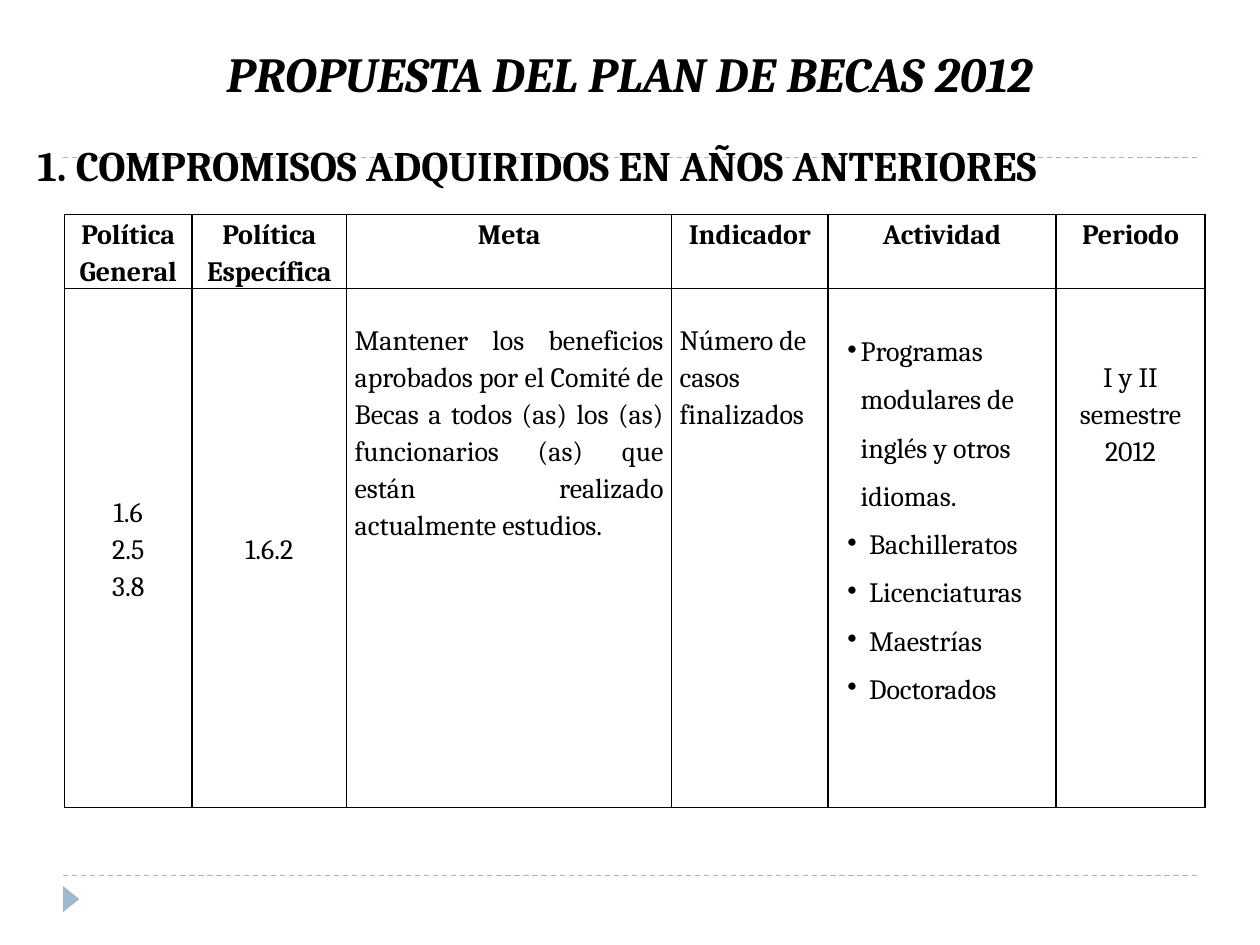
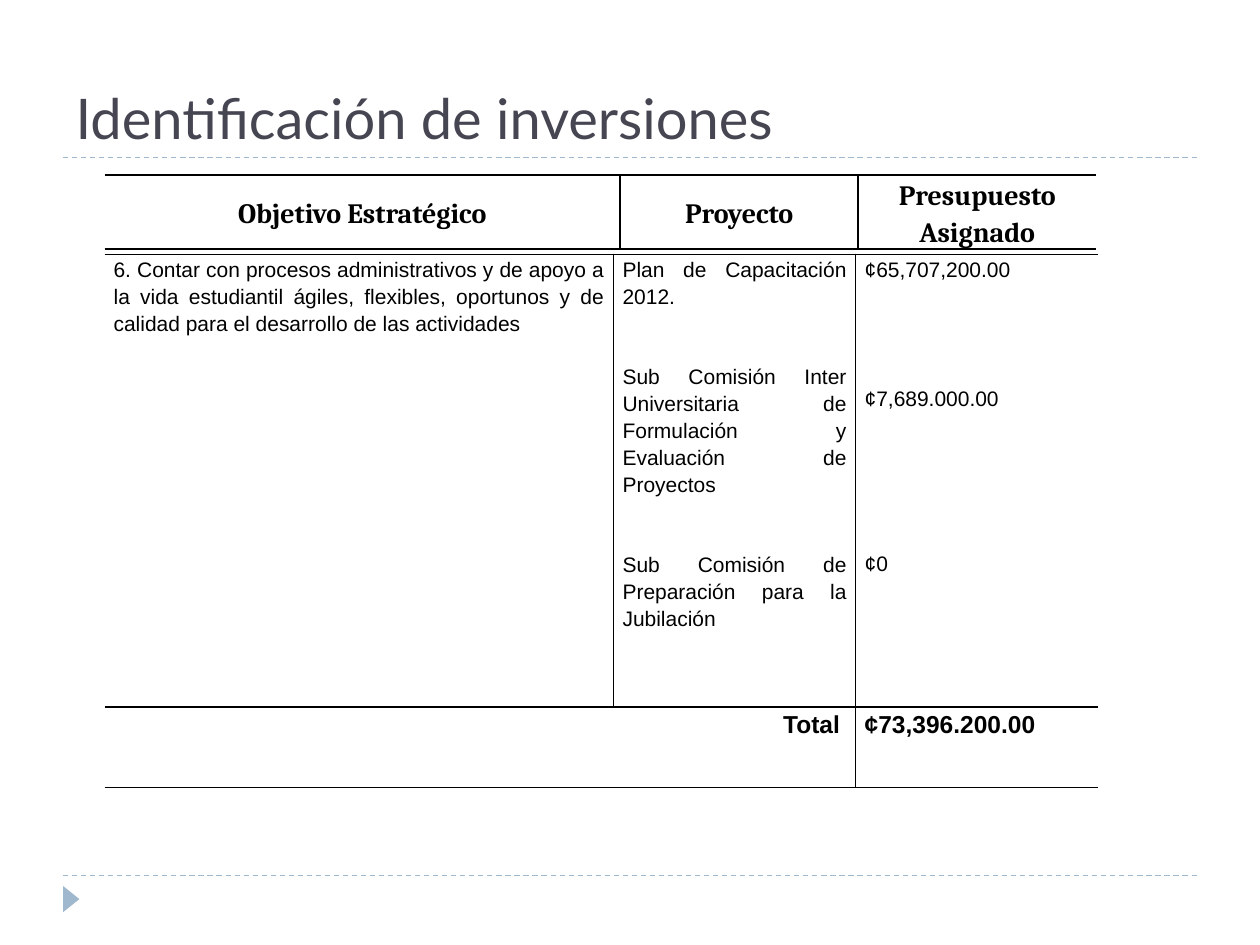
from lxml import etree
from pptx import Presentation
from pptx.dml.color import RGBColor
from pptx.enum import dml, shapes, text
from pptx.oxml import ns
from pptx.util import Cm, Pt

COLORS = {"ink": "000000", "title": "464653", "band": "9FB8CD"}
SERIF, SANS, HEAD = "Cambria", "Arial", "Lato"
ALIGN = text.PP_ALIGN
MIDDLE = text.MSO_ANCHOR.MIDDLE


def color(name):
    return RGBColor.from_string(COLORS[name])


def style(par, font, size, bold=False, italic=False, ink="ink", align=ALIGN.LEFT):
    par.alignment = align
    par.font.name, par.font.size = font, Pt(size)
    par.font.bold, par.font.italic = bold, italic
    par.font.color.rgb = color(ink)


def place(shape, left, top, width, height):
    shape.left, shape.top = Cm(left), Cm(top)
    shape.width, shape.height = Cm(width), Cm(height)


def add_bands(slide):
    """Draw the two dashed rules and the corner marker."""
    for y in (3.18, 17.65):
        rule = slide.shapes.add_connector(
            shapes.MSO_CONNECTOR.STRAIGHT, Cm(1.27), Cm(y), Cm(24.13), Cm(y))
        rule.line.color.rgb = color("band")
        rule.line.width = Pt(0.75)
        rule.line.dash_style = dml.MSO_LINE.DASH
        etree.SubElement(rule.element.spPr, ns.qn("a:effectLst"))
    mark = slide.shapes.add_shape(
        shapes.MSO_SHAPE.ISOSCELES_TRIANGLE, Cm(1.17), Cm(17.96), Cm(0.53), Cm(0.33))
    mark.rotation = 90
    mark.shadow.inherit = False
    mark.fill.solid()
    mark.fill.fore_color.rgb = color("band")
    mark.line.fill.background()


def add_page(prs, title, box, anchor, **look):
    slide = prs.slides.add_slide(prs.slide_layouts[5])
    head = slide.shapes.title
    place(head, *box)
    frame = head.text_frame
    frame.text = title
    frame.vertical_anchor = anchor
    frame.auto_size = text.MSO_AUTO_SIZE.NONE
    style(frame.paragraphs[0], **look)
    add_bands(slide)
    return slide


def add_label(slide, words, box, **look):
    label = slide.shapes.add_textbox(*map(Cm, box))
    label.text_frame.word_wrap = True
    label.text_frame.text = words
    style(label.text_frame.paragraphs[0], **look)


def set_edges(cell, left, right):
    """Rule the top and bottom, and the sides that are asked for."""
    props = cell._tc.get_or_add_tcPr()
    sides = {"L": left, "R": right, "T": True, "B": True}
    for spot, (side, shown) in enumerate(sides.items()):
        edge = etree.Element(ns.qn(f"a:ln{side}"), w=str(Pt(1)))
        fill = etree.SubElement(edge, ns.qn("a:solidFill" if shown else "a:noFill"))
        if shown:
            etree.SubElement(fill, ns.qn("a:srgbClr"), val=COLORS["ink"])
        props.insert(spot, edge)


def add_grid(slide, left, top, cols, rows, inset, closed=False):
    """Add a ruled table; its outer sides are drawn only when closed."""
    grid = slide.shapes.add_table(
        len(rows), len(cols), Cm(left), Cm(top), Cm(sum(cols)), Cm(sum(rows))).table
    grid.first_row = grid.horz_banding = False
    for col, width in zip(grid.columns, cols):
        col.width = Cm(width)
    for row, height in zip(grid.rows, rows):
        row.height = Cm(height)
    for cell in grid.iter_cells():
        cell.margin_left = cell.margin_right = Cm(inset)
        cell.margin_top = cell.margin_bottom = 0
        cell.fill.background()
    return grid


def rule_grid(grid, closed=False):
    """Draw the borders; the outer sides only when closed."""
    last = len(grid.columns) - 1
    for row in grid.rows:
        for col, cell in enumerate(row.cells):
            set_edges(cell, (closed or col > 0) and not cell.is_spanned,
                      (closed or col < last) and not cell.is_merge_origin)


def fill_cell(cell, lines, top=0, anchor=None, gaps=(), space=1.15, **look):
    """Write one paragraph a line; gaps are the points above each later one."""
    cell.text = "\n".join(lines)
    cell.margin_top = Cm(top)
    cell.vertical_anchor = anchor
    pars = cell.text_frame.paragraphs
    for par in pars:
        par.line_spacing = space
        style(par, **look)
    for par, gap in zip(pars[1:], gaps):
        par.space_before = Pt(gap)


def set_bullet(par, margin, start=0.23):
    props = par._p.get_or_add_pPr()
    props.set("marL", str(Cm(margin)))
    props.set("indent", str(Cm(start - margin)))
    tint = etree.SubElement(props, ns.qn("a:buClr"))
    etree.SubElement(tint, ns.qn("a:srgbClr"), val=COLORS["ink"])
    etree.SubElement(props, ns.qn("a:buChar"), char="•")


def fill_heads(grid, heads, anchor=None):
    for cell, head in zip(grid.rows[0].cells, heads):
        fill_cell(cell, [head], anchor=anchor, font=SERIF, size=16, bold=True,
                  align=ALIGN.CENTER)


def add_plan(prs):
    slide = add_page(prs, "PROPUESTA DEL PLAN DE BECAS 2012", (2.49, 0.74, 20.4, 1.45),
                     text.MSO_ANCHOR.TOP, font=SERIF, size=28, bold=True, italic=True,
                     align=ALIGN.CENTER)
    grid = add_grid(slide, 1.3, 4.32, (2.57, 3.12, 6.55, 3.15, 4.6, 3), (1.5, 10.46), 0.16)
    fill_heads(grid, ("Política General", "Política Específica", "Meta", "Indicador",
                      "Actividad", "Periodo"))
    tasks = ["Programas modulares de inglés y otros idiomas.", "Bachilleratos",
             "Licenciaturas", "Maestrías", "Doctorados"]
    goal = ("Mantener los beneficios aprobados por el Comité de Becas a todos (as) los (as) "
            "funcionarios (as) que están realizado actualmente estudios.")
    body = [
        (["1.6", "2.5", "3.8"], dict(anchor=MIDDLE, align=ALIGN.CENTER)),
        (["1.6.2"], dict(anchor=MIDDLE, align=ALIGN.CENTER)),
        ([goal], dict(top=0.64, align=ALIGN.JUSTIFY)),
        (["Número de casos finalizados"], dict(top=0.64)),
        (tasks, dict(top=0.64, space=1.5)),
        (["I y II semestre 2012"], dict(top=1.38, align=ALIGN.CENTER)),
    ]
    for cell, (lines, look) in zip(grid.rows[1].cells, body):
        fill_cell(cell, lines, font=SERIF, size=16, **look)
    for spot, par in enumerate(grid.cell(1, 4).text_frame.paragraphs):
        set_bullet(par, 0.67 if spot else 0.5)
    rule_grid(grid, closed=True)
    add_label(slide, "1. COMPROMISOS ADQUIRIDOS EN AÑOS ANTERIORES", (0.51, 2.68, 23.8, 1.4),
              font=SERIF, size=24, bold=True)


def add_funds(prs):
    slide = add_page(prs, "Identificación de inversiones", (1.27, 0.43, 22.86, 2.74),
                     text.MSO_ANCHOR.BOTTOM, font=HEAD, size=32, ink="title")
    grid = add_grid(slide, 2.11, 5.13, (10.26, 4.88, 4.88), (9.12, 1.63), 0.18)
    aim = ("6. Contar con procesos administrativos y de apoyo a la vida estudiantil ágiles, "
           "flexibles, oportunos y de calidad para el desarrollo de las actividades")
    works = ["Plan de Capacitación 2012.",
             "Sub Comisión Inter Universitaria de Formulación y Evaluación de Proyectos",
             "Sub Comisión de Preparación para la Jubilación"]
    sums = ["¢65,707,200.00", "¢7,689.000.00", "¢0"]
    body = [([aim], ()), (works, (30.3, 30.3)), (sums, (58.3, 78.9))]
    for cell, (lines, gaps) in zip(grid.rows[0].cells, body):
        fill_cell(cell, lines, gaps=gaps, font=SANS, size=12, align=ALIGN.JUSTIFY)
    grid.cell(1, 0).merge(grid.cell(1, 1))
    for col, words, align in ((0, "Total ", ALIGN.RIGHT), (2, "¢73,396.200.00", ALIGN.JUSTIFY)):
        fill_cell(grid.cell(1, col), [words], font=SANS, size=14, bold=True, align=align)
    rule_grid(grid)

    heads = add_grid(slide, 2.11, 3.53, (10.39, 4.8, 4.8), (1.47,), 0.18)
    fill_heads(heads, ("Objetivo Estratégico", "Proyecto", "Presupuesto Asignado"), MIDDLE)
    rule_grid(heads)


def main():
    prs = Presentation()
    prs.slide_width, prs.slide_height = Cm(25.4), Cm(19.05)
    add_plan(prs)
    add_funds(prs)
    prs.save("out.pptx")


if __name__ == "__main__":
    main()
